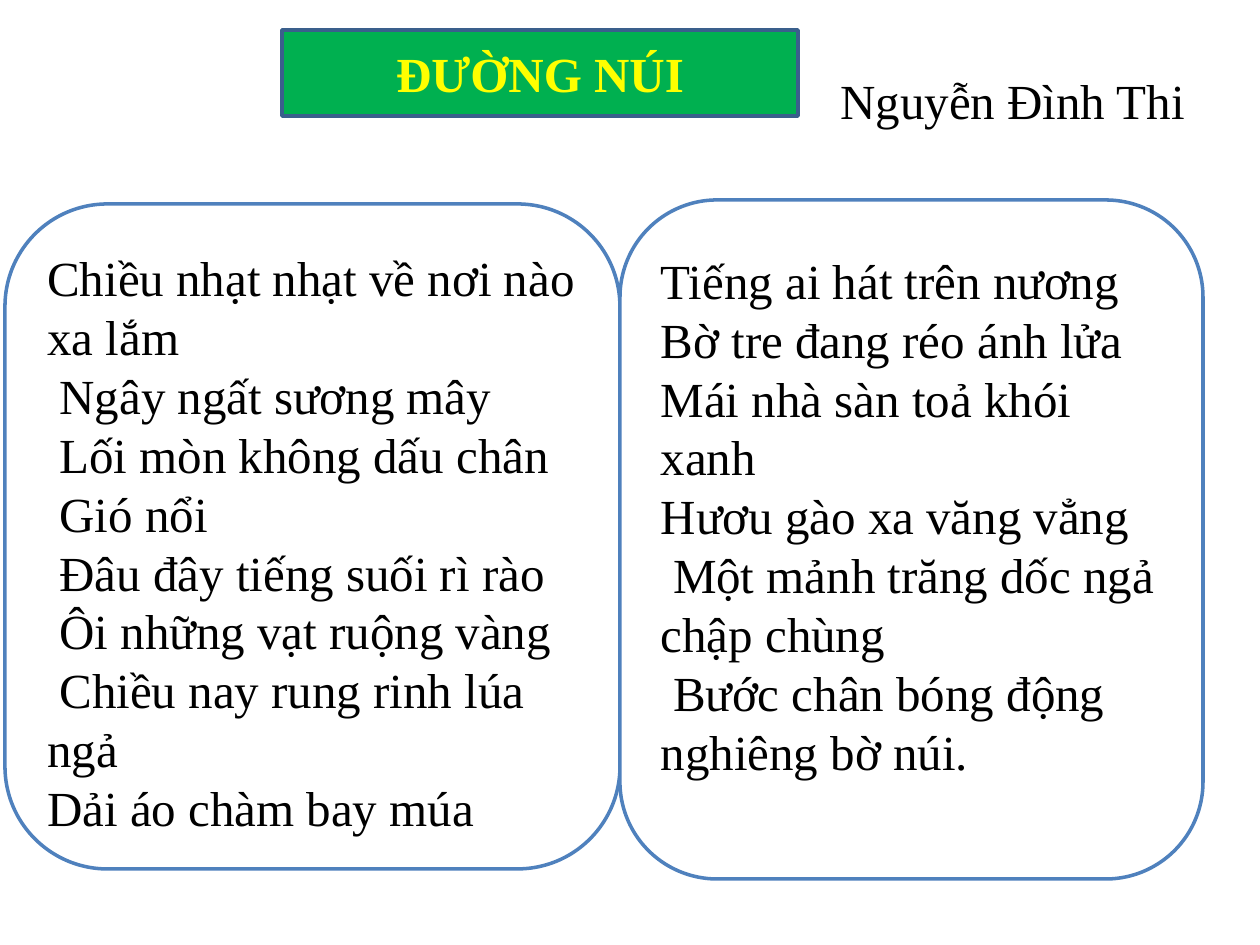
from dataclasses import dataclass

from pptx import Presentation
from pptx.dml.color import RGBColor
from pptx.enum.shapes import MSO_SHAPE
from pptx.enum.text import MSO_ANCHOR, MSO_AUTO_SIZE, PP_ALIGN
from pptx.oxml import parse_xml
from pptx.oxml.ns import nsdecls
from pptx.util import Emu, Pt

ROUNDED = MSO_SHAPE.ROUNDED_RECTANGLE
TOP, MIDDLE = MSO_ANCHOR.TOP, MSO_ANCHOR.MIDDLE
LEFT, CENTER = PP_ALIGN.LEFT, PP_ALIGN.CENTER
NO_FIT = MSO_AUTO_SIZE.NONE
TITLE_ONLY = 5
PX_PER_INCH = 126
FONT = "Times New Roman"
SIZE = 28
BLACK, WHITE, YELLOW = "000000", "FFFFFF", "FFFF00"
GREEN, BLUE, DARK_BLUE = "00B050", "4F81BD", "3A5F8C"


@dataclass
class Box:
    x: int
    y: int
    w: int
    h: int


@dataclass
class Stanza:
    box: Box
    top_inset: int
    verses: list[str]


STANZAS = [
    Stanza(Box(5, 204, 615, 665), 14, [
        "Chiều nhạt nhạt về nơi nào xa lắm",
        " Ngây ngất sương mây",
        " Lối mòn không dấu chân",
        " Gió nổi",
        " Đâu đây tiếng suối rì rào",
        " Ôi những vạt ruộng vàng",
        " Chiều nay rung rinh lúa ngả",
        "Dải áo chàm bay múa",
    ]),
    Stanza(Box(620, 200, 583, 679), 22, [
        "Tiếng ai hát trên nương",
        "Bờ tre đang réo ánh lửa",
        "Mái nhà sàn toả khói xanh",
        "Hươu gào xa văng vẳng",
        " Một mảnh trăng dốc ngả chập chùng",
        " Bước chân bóng động nghiêng bờ núi.",
    ]),
]


def px(n: int) -> Emu:
    return Emu(round(n * 914400 / PX_PER_INCH))


def rgb(value: str) -> RGBColor:
    return RGBColor.from_string(value)


def bounds(box: Box) -> tuple[Emu, Emu, Emu, Emu]:
    return px(box.x), px(box.y), px(box.w), px(box.h)


def paint(s, fill: str, line: str) -> None:
    s.fill.solid()
    s.fill.fore_color.rgb = rgb(fill)
    s.line.color.rgb = rgb(line)
    s.line.width = Pt(2)


def write(tf, lines: list[str], color: str = BLACK, bold: bool = False,
          align=LEFT, anchor=TOP) -> None:
    tf.word_wrap = True
    tf.auto_size = NO_FIT
    tf.vertical_anchor = anchor
    for i, line in enumerate(lines):
        p = tf.paragraphs[0] if i == 0 else tf.add_paragraph()
        p.alignment = align
        r = p.add_run()
        r.text = line
        r.font.name = FONT
        r.font.size = Pt(SIZE)
        r.font.bold = bold
        r.font.color.rgb = rgb(color)


def add_title(slide, box: Box, text: str) -> None:
    """Shape the title placeholder as a filled ellipse."""
    s = slide.shapes.title
    s.left, s.top, s.width, s.height = bounds(box)
    s.element.spPr.append(parse_xml(
        f'<a:prstGeom {nsdecls("a")} prst="ellipse"><a:avLst/></a:prstGeom>'))
    paint(s, GREEN, DARK_BLUE)
    write(s.text_frame, [text], YELLOW, True, CENTER, MIDDLE)


def add_author(slide, box: Box, name: str) -> None:
    s = slide.shapes.add_textbox(*bounds(box))
    write(s.text_frame, [name])


def add_stanza(slide, stanza: Stanza) -> None:
    s = slide.shapes.add_shape(ROUNDED, *bounds(stanza.box))
    s.shadow.inherit = False
    paint(s, WHITE, BLUE)
    s.text_frame.margin_top = px(stanza.top_inset)
    write(s.text_frame, stanza.verses)


def main() -> None:
    prs = Presentation()
    prs.slide_width, prs.slide_height = px(1260), px(945)
    slide = prs.slides.add_slide(prs.slide_layouts[TITLE_ONLY])
    add_title(slide, Box(282, 30, 516, 86), "ĐƯỜNG NÚI")
    add_author(slide, Box(828, 64, 432, 72), "Nguyễn Đình Thi")
    for stanza in STANZAS:
        add_stanza(slide, stanza)
    prs.save("out.pptx")


if __name__ == "__main__":
    main()
